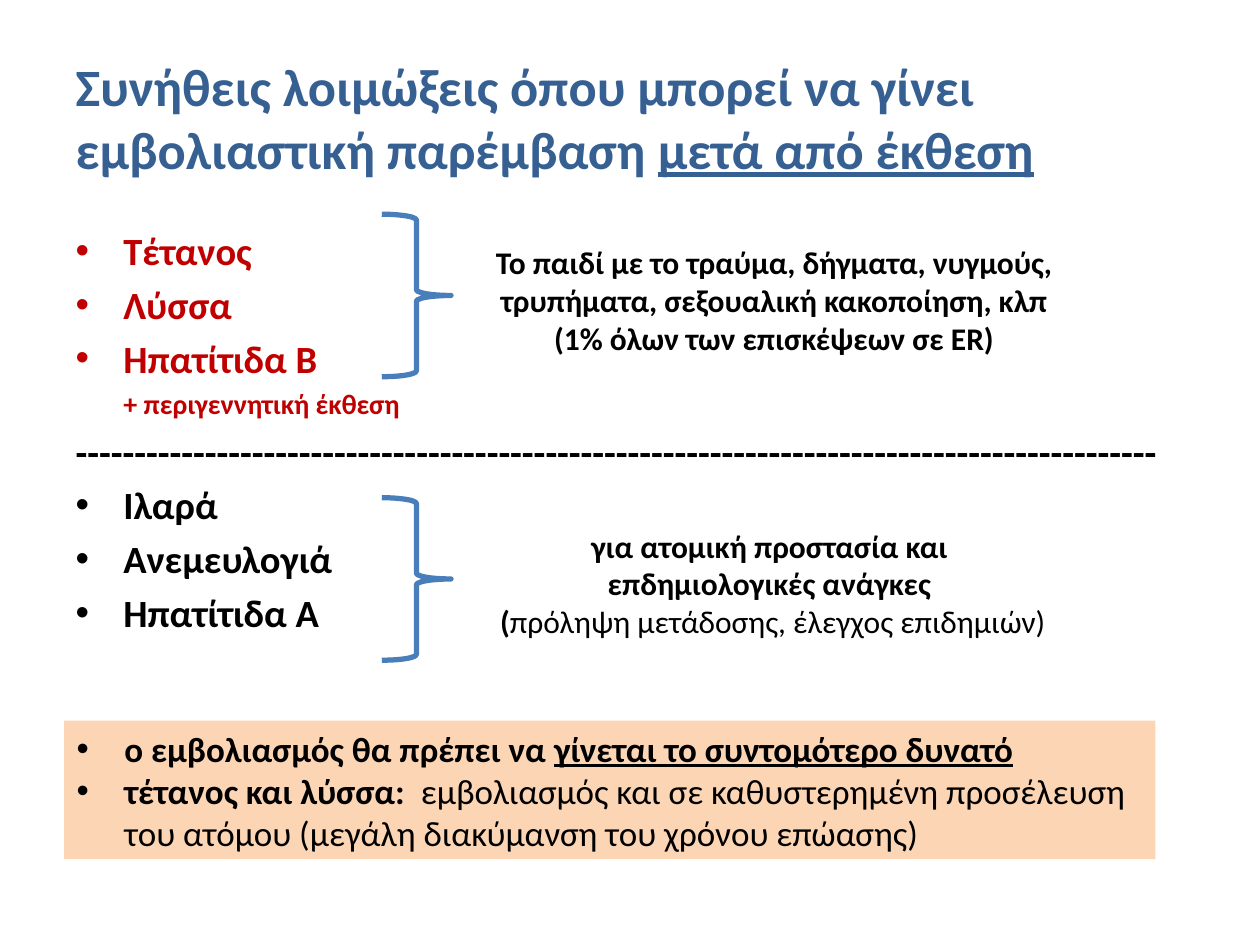
from typing import NamedTuple

from pptx import Presentation
from pptx.dml.color import RGBColor
from pptx.enum import shapes, text
from pptx.oxml import ns
from pptx.util import Inches, Pt
from lxml import etree

FONT = "Calibri"
BLACK, RED, BLUE = "000000", "C00000", "376092"
HANGING = 0.38


class Run(NamedTuple):
    words: str
    size: float
    color: str = BLACK
    bold: bool = True
    underline: bool = False


class Line(NamedTuple):
    runs: list[Run]
    bullet: bool = False
    left: float = 0
    first: float = 0


class Group(NamedTuple):
    top: float
    note_left: float
    note: list[list[Run]]


def rgb(color: str) -> RGBColor:
    return RGBColor.from_string(color)


def bulleted(*runs: Run) -> Line:
    return Line(list(runs), True, HANGING, -HANGING)


def place(shape, left: float, top: float, width: float, height: float) -> None:
    shape.left, shape.top = Inches(left), Inches(top)
    shape.width, shape.height = Inches(width), Inches(height)


def write(shape, lines: list[Line], alignment=text.PP_ALIGN.LEFT,
          anchor=text.MSO_ANCHOR.TOP) -> None:
    frame = shape.text_frame
    frame.word_wrap = True
    frame.auto_size = text.MSO_AUTO_SIZE.NONE
    frame.vertical_anchor = anchor
    for index, line in enumerate(lines):
        paragraph = frame.paragraphs[0] if index == 0 else frame.add_paragraph()
        paragraph.alignment = alignment
        properties = paragraph._p.get_or_add_pPr()
        properties.set("marL", str(Inches(line.left)))
        properties.set("indent", str(Inches(line.first)))
        if line.bullet:
            bullet_font = etree.SubElement(properties, ns.qn("a:buFont"))
            bullet_font.set("typeface", "Arial")
            etree.SubElement(properties, ns.qn("a:buChar")).set("char", "•")
        else:
            etree.SubElement(properties, ns.qn("a:buNone"))
        for part in line.runs:
            run = paragraph.add_run()
            run.text = part.words
            run.font.name = FONT
            run.font.size = Pt(part.size)
            run.font.bold = part.bold
            run.font.underline = part.underline
            run.font.color.rgb = rgb(part.color)


def draw_group(slide, group: Group) -> None:
    """Draw a brace and the centred note beside it."""
    brace = slide.shapes.add_shape(
        shapes.MSO_SHAPE.RIGHT_BRACE,
        Inches(3.03), Inches(group.top), Inches(0.55), Inches(1.29))
    brace.shadow.inherit = False
    brace.fill.background()
    brace.line.color.rgb = rgb("4A7EBB")
    brace.line.width = Pt(3)
    note = slide.shapes.add_textbox(
        Inches(group.note_left), Inches(group.top + 0.18), Inches(5.43), Inches(1.3))
    write(note, [Line(runs) for runs in group.note], text.PP_ALIGN.CENTER)


GROUPS = [
    Group(1.7, 3.43, [
        [Run("Το παιδί με το τραύμα, δήγματα, νυγμούς, "
             "τρυπήματα, σεξουαλική κακοποίηση, κλπ", 18)],
        [Run("(1% όλων των επισκέψεων σε ER)", 18)],
    ]),
    Group(3.95, 3.42, [
        [Run("για ατομική προστασία και ", 18)],
        [Run("επδημιολογικές ανάγκες ", 18)],
        [Run("(", 18), Run("πρόληψη μετάδοσης, έλεγχος επιδημιών)", 18, bold=False)],
    ]),
]


def main() -> None:
    presentation = Presentation()
    presentation.slide_width, presentation.slide_height = Inches(10), Inches(7.5)
    slide = presentation.slides.add_slide(presentation.slide_layouts[1])

    # Title
    title = slide.shapes.title
    place(title, 0.5, 0.3, 9, 1.25)
    write(title, [Line([
        Run("Συνήθεις λοιμώξεις όπου μπορεί να γίνει εμβολιαστική παρέμβαση ", 30, BLUE),
        Run("μετά από έκθεση", 30, BLUE, underline=True),
    ])], anchor=text.MSO_ANCHOR.MIDDLE)

    # Infections, in two lists parted by a row of dashes
    body = slide.placeholders[1]
    place(body, 0.5, 1.75, 9, 4.44)
    write(body, [
        *(bulleted(Run(name, 22, RED)) for name in ("Τέτανος", "Λύσσα", "Ηπατίτιδα Β")),
        Line([Run("+ περιγεννητική έκθεση", 16, RED)], left=HANGING),
        Line([Run("-" * 92, 22)], left=HANGING, first=-HANGING),
        *(bulleted(Run(name, 22)) for name in ("Ιλαρά", "Ανεμευλογιά", "Ηπατίτιδα Α")),
    ])

    # Braces with notes
    for group in GROUPS:
        draw_group(slide, group)

    # Conclusion panel
    panel = slide.shapes.add_shape(
        shapes.MSO_SHAPE.RECTANGLE, Inches(0.51), Inches(5.72), Inches(8.66), Inches(1.1))
    panel.shadow.inherit = False
    panel.fill.solid()
    panel.fill.fore_color.rgb = rgb("FCD5B5")
    panel.line.fill.background()
    write(panel, [
        bulleted(Run("ο εμβολιασμός θα πρέπει να ", 20),
                 Run("γίνεται το συντομότερο δυνατό", 20, underline=True)),
        bulleted(Run("τέτανος και λύσσα:  ", 20),
                 Run("εμβολιασμός και σε καθυστερημένη προσέλευση του ατόμου "
                     "(μεγάλη διακύμανση του χρόνου επώασης)", 20, bold=False)),
    ], anchor=text.MSO_ANCHOR.MIDDLE)

    presentation.save("out.pptx")


if __name__ == "__main__":
    main()
